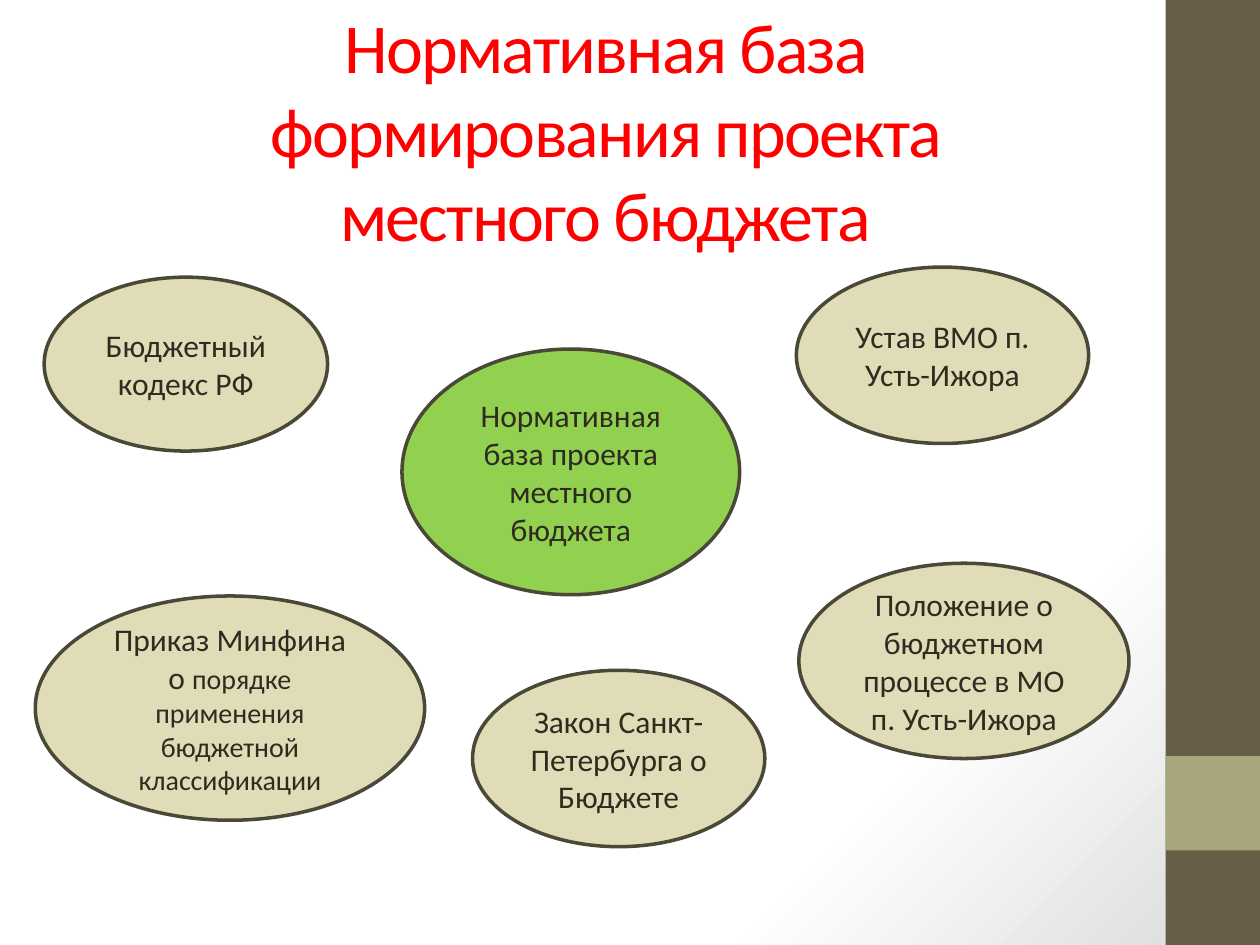
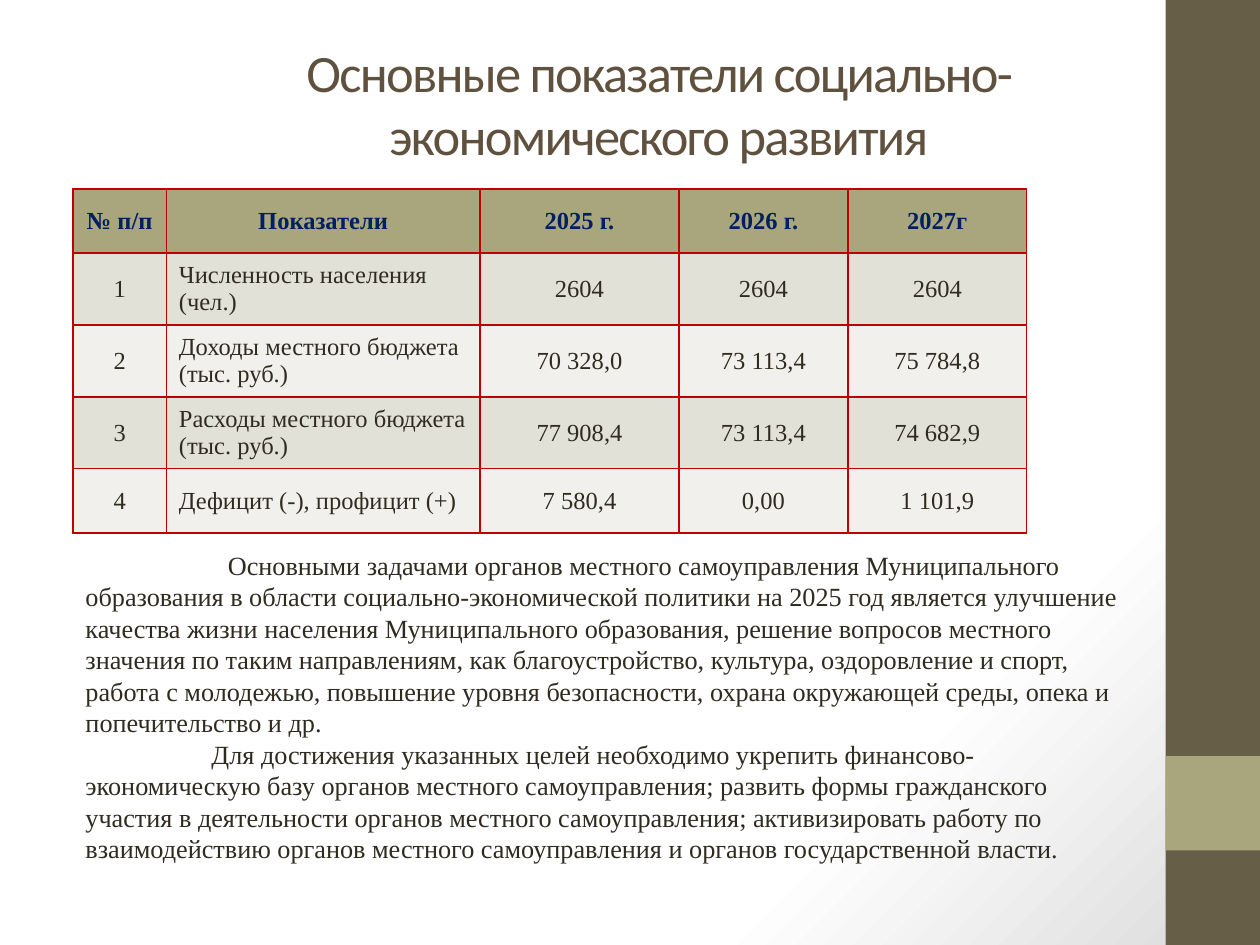
"""Builds two slides on the local budget: its legal basis and its main indicators."""
from lxml import etree
from pptx import Presentation
from pptx.dml.color import RGBColor
from pptx.enum.shapes import MSO_SHAPE
from pptx.enum.text import MSO_ANCHOR, MSO_AUTO_SIZE, PP_ALIGN
from pptx.oxml.ns import qn
from pptx.util import Inches, Pt

OVAL, RECTANGLE = MSO_SHAPE.OVAL, MSO_SHAPE.RECTANGLE
MIDDLE, BOTTOM = MSO_ANCHOR.MIDDLE, MSO_ANCHOR.BOTTOM
CENTER, LEFT = PP_ALIGN.CENTER, PP_ALIGN.LEFT
NO_FIT = MSO_AUTO_SIZE.NONE

WHITE = RGBColor(0xFF, 0xFF, 0xFF)
PAGE_GREY = RGBColor(0xDA, 0xDA, 0xDA)
BAND_BROWN = RGBColor(0x67, 0x5E, 0x47)
OLIVE = RGBColor(0xA9, 0xA5, 0x7C)
TEXT_DARK = RGBColor(0x2F, 0x2B, 0x20)
TITLE_RED = RGBColor(0xFF, 0x00, 0x00)
TITLE_BROWN = RGBColor(0x5F, 0x51, 0x3E)
SAND = RGBColor(0xDF, 0xDC, 0xB7)
GREEN = RGBColor(0x92, 0xD0, 0x50)
OVAL_LINE = RGBColor(0x4A, 0x48, 0x36)
HEADER_NAVY = RGBColor(0x00, 0x20, 0x60)
BORDER_RED = RGBColor(0xC0, 0x00, 0x00)
ROW_DARK = RGBColor(0xE2, 0xE1, 0xD7)
ROW_LIGHT = RGBColor(0xF1, 0xF0, 0xEC)

SANS, SERIF = "Calibri", "Times New Roman"
TITLE_ONLY = 5

SOURCES = [
    ((0.35, 2.2, 2.25, 1.38), SAND, [("Бюджетный кодекс РФ", 18)]),
    ((6.32, 2.12, 2.32, 1.4), SAND, [("Устав ВМО п. Усть-Ижора", 18)]),
    ((3.19, 2.77, 2.68, 1.95), GREEN,
     [("Нормативная база проекта местного бюджета", 18)]),
    ((0.28, 4.73, 3.09, 1.78), SAND,
     [("Приказ Минфина о ", 18),
      ("порядке применения бюджетной классификации", 16)]),
    ((3.75, 5.32, 2.32, 1.4), SAND, [("Закон Санкт-Петербурга о Бюджете", 18)]),
    ((6.34, 4.47, 2.62, 1.55), SAND,
     [("Положение о бюджетном процессе в МО п. Усть-Ижора", 18)]),
]

INDICATORS = [
    ("№ п/п", "Показатели", "2025 г.", "2026 г.", "2027г"),
    ("1", "Численность населения (чел.)", "2604", "2604", "2604"),
    ("2", "Доходы местного бюджета (тыс. руб.)", "70 328,0", "73 113,4", "75 784,8"),
    ("3", "Расходы местного бюджета (тыс. руб.)", "77 908,4", "73 113,4", "74 682,9"),
    ("4", "Дефицит (-), профицит (+)", "7 580,4", "0,00", "1 101,9"),
]
COLUMN_WIDTHS = (0.74, 2.49, 1.58, 1.34, 1.42)
ROW_HEIGHTS = (0.51, 0.57, 0.57, 0.57, 0.51)

GOALS = [
    (1.13, "Основными задачами органов местного самоуправления Муниципального "
     "образования в области социально-экономической политики на 2025 год является "
     "улучшение качества жизни населения Муниципального образования, решение вопросов "
     "местного значения по таким направлениям, как благоустройство, культура, "
     "оздоровление и спорт, работа с молодежью, повышение уровня безопасности, охрана "
     "окружающей среды, опека и попечительство и др."),
    (1.0, "Для достижения указанных целей необходимо укрепить финансово-экономическую "
     "базу органов местного самоуправления; развить формы гражданского участия в "
     "деятельности органов местного самоуправления; активизировать работу по "
     "взаимодействию органов местного самоуправления и органов государственной власти."),
]


def inches(box):
    """Turn a box of numbers into lengths."""
    return [Inches(value) for value in box]


def add_span(para, text, size, color, font=SANS, bold=False):
    """Add one formatted run to a paragraph and return it."""
    span = para.add_run()
    span.text = text
    span.font.name = font
    span.font.size = Pt(size)
    span.font.bold = bold
    span.font.color.rgb = color
    return span


def add_plain_shape(page, kind, box, fill):
    """Add a flat filled shape without outline or shadow."""
    shape = page.shapes.add_shape(kind, *inches(box))
    shape.shadow.inherit = False
    shape.fill.solid()
    shape.fill.fore_color.rgb = fill
    shape.line.fill.background()
    return shape


def style_master(deck, page):
    """Give the master its gradient and the two side bands, drawn first on a page."""
    master = deck.slide_master
    fill = master.background.fill
    fill.gradient()
    fill.gradient_angle = 315
    for stop, position, color in zip(fill.gradient_stops, (0.75, 1), (WHITE, PAGE_GREY)):
        stop.position = position
        stop.color.rgb = color
    bands = [((9.25, 0, 0.75, 7.5), BAND_BROWN), ((9.25, 6, 0.75, 0.75), OLIVE)]
    for number, (box, color) in enumerate(bands):
        band = add_plain_shape(page, RECTANGLE, box, color)
        band.element.nvSpPr.cNvPr.set("id", str(100 + number))
        master.shapes.element.insert(2 + number, band.element)


def set_title(page, box, text, size, color):
    """Place and format the title placeholder."""
    title = page.shapes.title
    title.left, title.top, title.width, title.height = inches(box)
    frame = title.text_frame
    frame.auto_size = NO_FIT
    frame.word_wrap = True
    frame.vertical_anchor = BOTTOM
    para = frame.paragraphs[0]
    para.alignment = CENTER
    span = add_span(para, text, size, color)
    span.font._element.set("spc", "-100")


def add_source_oval(page, box, fill, parts):
    """Add an outlined oval that names one legal source."""
    oval = add_plain_shape(page, OVAL, box, fill)
    oval.line.color.rgb = OVAL_LINE
    oval.line.width = Pt(2)
    frame = oval.text_frame
    frame.word_wrap = True
    frame.vertical_anchor = MIDDLE
    para = frame.paragraphs[0]
    para.alignment = CENTER
    for text, size in parts:
        add_span(para, text, size, TEXT_DARK)


def add_borders(cell):
    """Draw a thin red line on all four sides of a cell."""
    properties = cell._tc.get_or_add_tcPr()
    for index, side in enumerate(("a:lnL", "a:lnR", "a:lnT", "a:lnB")):
        line = etree.Element(qn(side), w=str(Pt(1)))
        fill = etree.SubElement(line, qn("a:solidFill"))
        etree.SubElement(fill, qn("a:srgbClr"), val=str(BORDER_RED))
        properties.insert(index, line)


def fill_cell(cell, text, row, column):
    """Format one table cell by its row and column."""
    header = row == 0
    cell.fill.solid()
    cell.fill.fore_color.rgb = OLIVE if header else ROW_DARK if row % 2 else ROW_LIGHT
    cell.vertical_anchor = MIDDLE
    para = cell.text_frame.paragraphs[0]
    para.alignment = LEFT if column == 1 and not header else CENTER
    add_span(para, text, 14, HEADER_NAVY if header else TEXT_DARK, SERIF, header)
    add_borders(cell)


def add_indicator_table(page, left, top):
    """Add the table of indicators with its corner at left, top."""
    box = (left, top, sum(COLUMN_WIDTHS), sum(ROW_HEIGHTS))
    table = page.shapes.add_table(len(ROW_HEIGHTS), len(COLUMN_WIDTHS), *inches(box)).table
    for column, width in zip(table.columns, COLUMN_WIDTHS):
        column.width = Inches(width)
    for row, height in zip(table.rows, ROW_HEIGHTS):
        row.height = Inches(height)
    for row, texts in enumerate(INDICATORS):
        for column, text in enumerate(texts):
            fill_cell(table.cell(row, column), text, row, column)


def add_goals(page, box):
    """Add the paragraphs on goals, each with its first-line indent."""
    frame = page.shapes.add_textbox(*inches(box)).text_frame
    frame.word_wrap = True
    for index, (indent, text) in enumerate(GOALS):
        para = frame.add_paragraph() if index else frame.paragraphs[0]
        para._p.get_or_add_pPr().set("indent", str(Inches(indent)))
        add_span(para, text, 15, TEXT_DARK, SERIF)


def build_legal_basis(page):
    """Build the slide of legal sources around the budget."""
    set_title(page, (1.46, 1.26, 6.69, 0.82),
              "Нормативная база формирования проекта местного бюджета", 40, TITLE_RED)
    for box, fill, parts in SOURCES:
        add_source_oval(page, box, fill, parts)


def build_indicators(page):
    """Build the slide of social and economic indicators."""
    set_title(page, (1.85, 0.29, 6.76, 1.08),
              "Основные показатели социально-экономического развития", 30, TITLE_BROWN)
    add_goals(page, (0.58, 4.31, 8.51, 2.65))
    add_indicator_table(page, 0.58, 1.5)


def main():
    """Build and save the deck."""
    deck = Presentation()
    deck.slide_width, deck.slide_height = Inches(10), Inches(7.5)
    layout = deck.slide_layouts[TITLE_ONLY]
    pages = [deck.slides.add_slide(layout) for _ in range(2)]
    style_master(deck, pages[0])
    build_legal_basis(pages[0])
    build_indicators(pages[1])
    deck.save("out.pptx")


if __name__ == "__main__":
    main()
